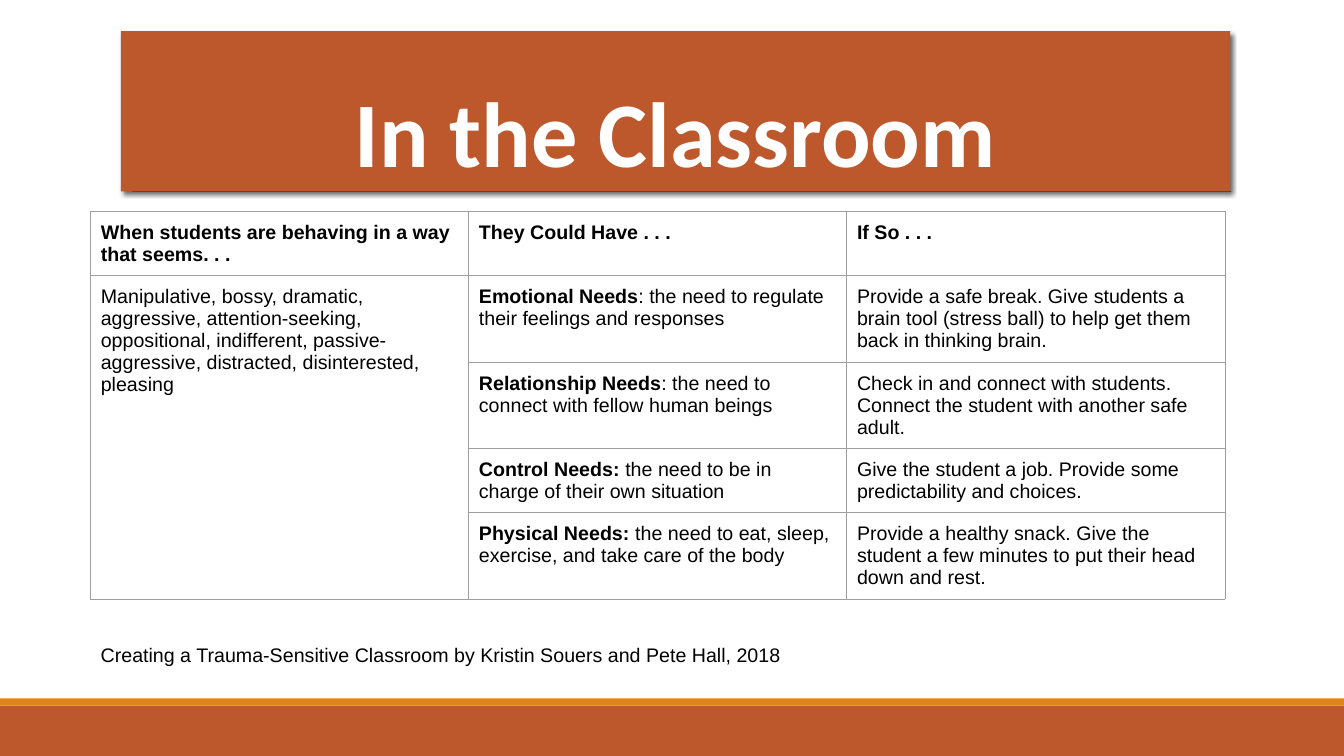
from lxml import etree
from pptx import Presentation
from pptx.dml.color import RGBColor
from pptx.enum import shapes, text
from pptx.oxml import parse_xml
from pptx.oxml.ns import nsdecls, qn
from pptx.util import Inches, Pt

RUST = RGBColor(0xBD, 0x58, 0x2C)
ORANGE = RGBColor(0xE4, 0x83, 0x12)
GRAY = RGBColor(0x7F, 0x7F, 0x7F)
BORDER = RGBColor(0x9E, 0x9E, 0x9E)
WHITE = RGBColor(0xFF, 0xFF, 0xFF)
BLACK = RGBColor(0, 0, 0)

TITLE = "In the Classroom"
HEADERS = ["When students are behaving in a way that seems. . .",
           "They Could Have . . .", "If So . . ."]
BEHAVIORS = ("Manipulative, bossy, dramatic, aggressive, attention-seeking, "
             "oppositional, indifferent, passive-aggressive, distracted, "
             "disinterested, pleasing")
# need, its meaning, response
NEEDS = [
    ("Emotional Needs", ": the need to regulate their feelings and responses",
     "Provide a safe break. Give students a brain tool (stress ball) to help "
     "get them back in thinking brain."),
    ("Relationship Needs", ": the need to connect with fellow human beings",
     "Check in and connect with students. Connect the student with another "
     "safe adult."),
    ("Control Needs: ", "the need to be in charge of their own situation",
     "Give the student a job. Provide some predictability and choices."),
    ("Physical Needs: ",
     "the need to eat, sleep, exercise, and take care of the body",
     "Provide a healthy snack. Give the student a few minutes to put their "
     "head down and rest."),
]
SOURCE = "Creating a Trauma-Sensitive Classroom by Kristin Souers and Pete Hall, 2018"
BANDS = [(7, 0.5, RUST), (6.93, 0.07, ORANGE)]  # top, height, colour
COL_W, ROW_H = 3.75, 0.42
MARGIN = Inches(0.1)


def write(p, *runs):
    """Fill a paragraph with (text, bold) runs in the body font."""
    for words, bold in runs:
        r = p.add_run()
        r.text = words
        r.font.bold = bold
    p.font.name, p.font.size = "Arial", Pt(14)
    p.font.color.rgb = BLACK


def set_margins(box):
    box.margin_left = box.margin_right = MARGIN
    box.margin_top = box.margin_bottom = MARGIN


def add_borders(cell):
    tcPr = cell._tc.get_or_add_tcPr()
    for i, side in enumerate(("lnL", "lnR", "lnT", "lnB")):
        tcPr.insert(i, parse_xml(
            f'<a:{side} {nsdecls("a")} w="9525"><a:solidFill>'
            f'<a:srgbClr val="{BORDER}"/></a:solidFill></a:{side}>'))


def add_bands(slide):
    for top, height, color in BANDS:
        sp = slide.shapes.add_shape(shapes.MSO_SHAPE.RECTANGLE, 0, Inches(top),
                                    Inches(13.33), Inches(height))
        sp.shadow.inherit = False
        sp.fill.solid()
        sp.fill.fore_color.rgb = color
        sp.line.fill.background()
    rule = slide.shapes.add_connector(
        shapes.MSO_CONNECTOR.STRAIGHT,
        Inches(1.31), Inches(1.9), Inches(12.21), Inches(1.9))
    rule.line.color.rgb = GRAY
    rule.line.width = Pt(0.75)
    etree.SubElement(rule._element.spPr, qn("a:effectLst"))


def add_title(slide):
    sp = slide.shapes.title
    sp.left, sp.top = Inches(1.2), Inches(0.31)
    sp.width, sp.height = Inches(11), Inches(1.59)
    sp.fill.solid()
    sp.fill.fore_color.rgb = RUST
    sp.line.fill.background()
    sp._element.spPr.append(parse_xml(
        f'<a:effectLst {nsdecls("a")}><a:outerShdw blurRad="{Pt(3.5)}" '
        f'dist="{Pt(2)}" dir="2700000"><a:srgbClr val="000000">'
        '<a:alpha val="60000"/></a:srgbClr></a:outerShdw></a:effectLst>'))
    tf = sp.text_frame
    tf.auto_size = text.MSO_AUTO_SIZE.NONE
    tf.vertical_anchor = text.MSO_ANCHOR.BOTTOM
    tf.text = TITLE
    p = tf.paragraphs[0]
    p.alignment = text.PP_ALIGN.CENTER
    p.line_spacing = 0.85
    p.font.name, p.font.size, p.font.bold = "Calibri", Pt(66), True
    p.font.color.rgb = WHITE
    # Bring the title in front of the rule
    slide.shapes._spTree.append(sp._element)


def add_needs_table(slide):
    rows, cols = len(NEEDS) + 1, len(HEADERS)
    table = slide.shapes.add_table(
        rows, cols, Inches(0.9), Inches(2.1),
        Inches(COL_W * cols), Inches(ROW_H * rows)).table
    table.first_row = table.horz_banding = False
    for row in table.rows:
        row.height = Inches(ROW_H)
    for cell in table.iter_cells():
        set_margins(cell)
        cell.fill.background()
        add_borders(cell)
    table.cell(1, 0).merge(table.cell(rows - 1, 0))

    def fill(row, col, *runs):
        write(table.cell(row, col).text_frame.paragraphs[0], *runs)

    for col, header in enumerate(HEADERS):
        fill(0, col, (header, True))
    fill(1, 0, (BEHAVIORS, False))
    for row, (need, meaning, response) in enumerate(NEEDS, 1):
        fill(row, 1, (need, True), (meaning, False))
        fill(row, 2, (response, False))


def add_source(slide):
    tf = slide.shapes.add_textbox(Inches(0.9), Inches(6.28),
                                  Inches(9.06), Inches(0.89)).text_frame
    tf.word_wrap = True
    set_margins(tf)
    write(tf.paragraphs[0], (SOURCE, False))


def main():
    prs = Presentation()
    prs.slide_width, prs.slide_height = Inches(13.33), Inches(7.5)
    slide = prs.slides.add_slide(prs.slide_layouts[5])
    add_bands(slide)
    add_title(slide)
    add_needs_table(slide)
    add_source(slide)
    prs.save("out.pptx")


if __name__ == "__main__":
    main()
